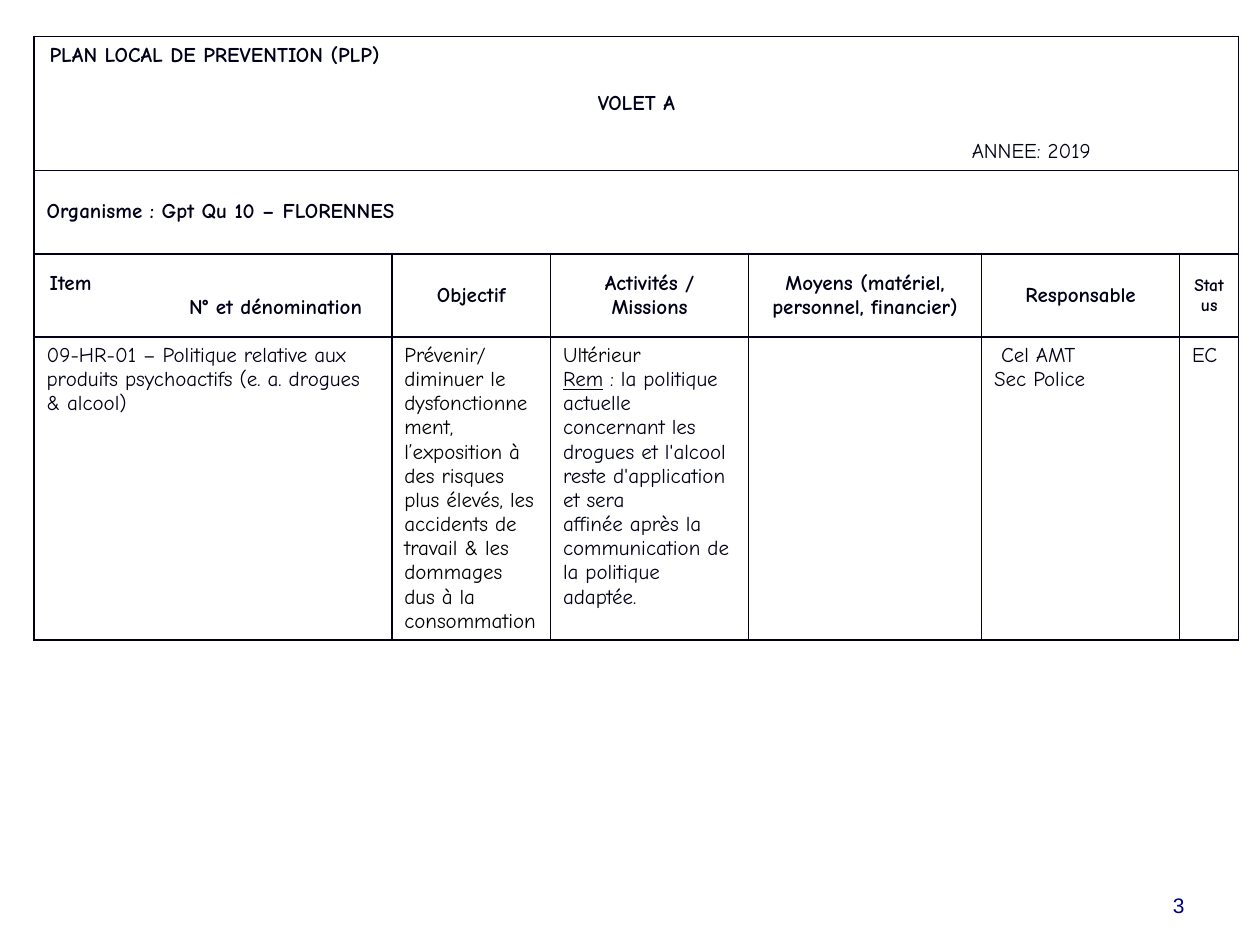
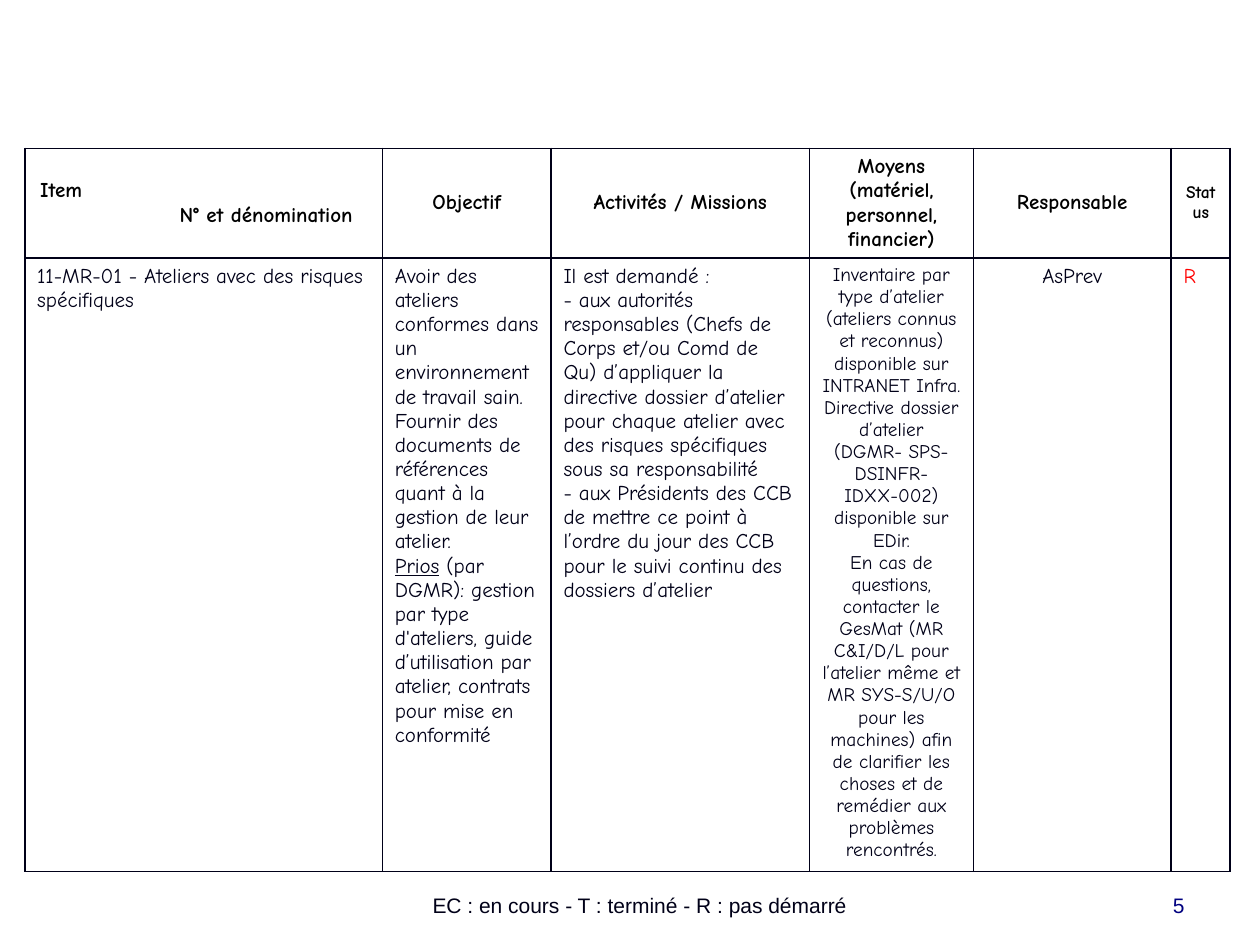
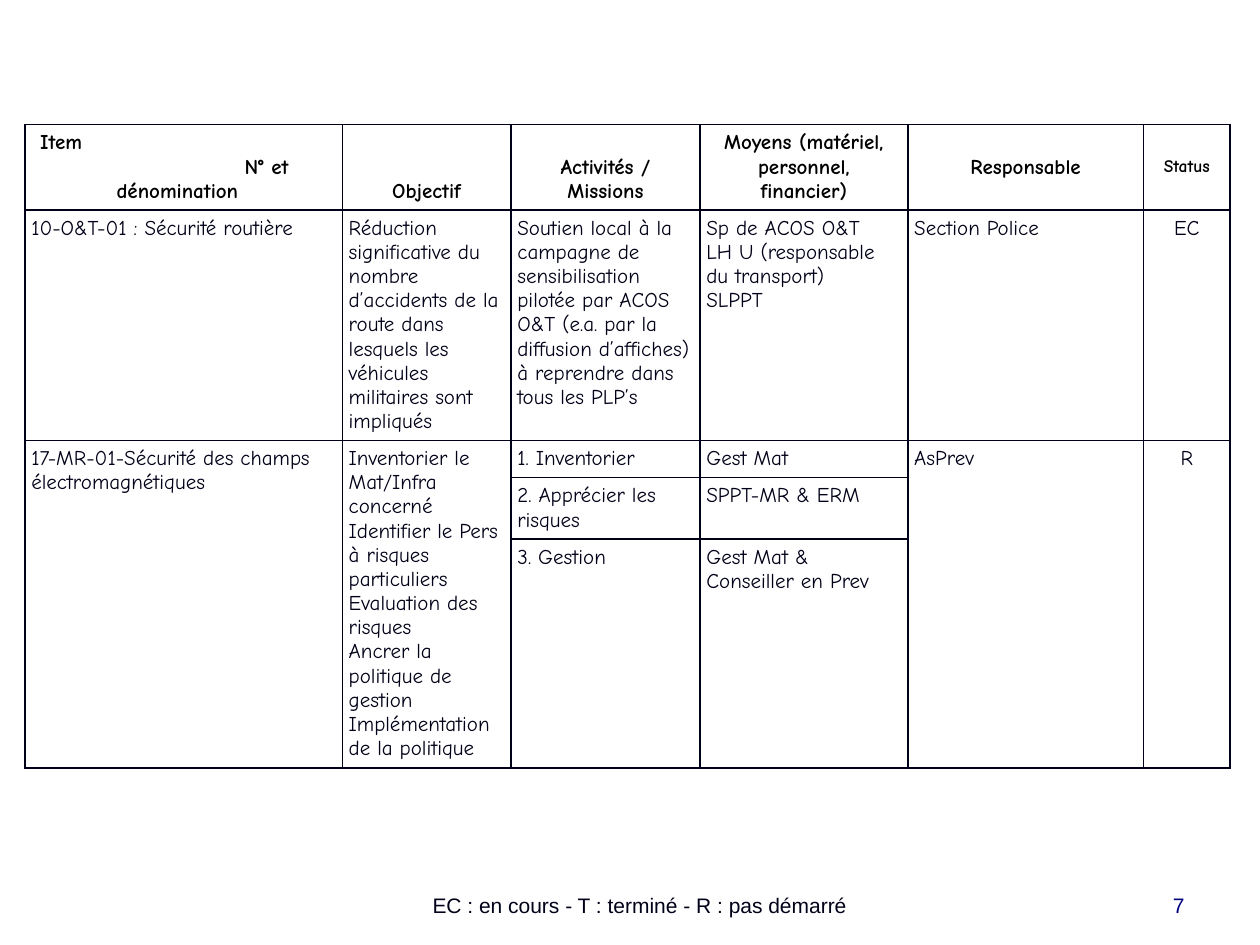
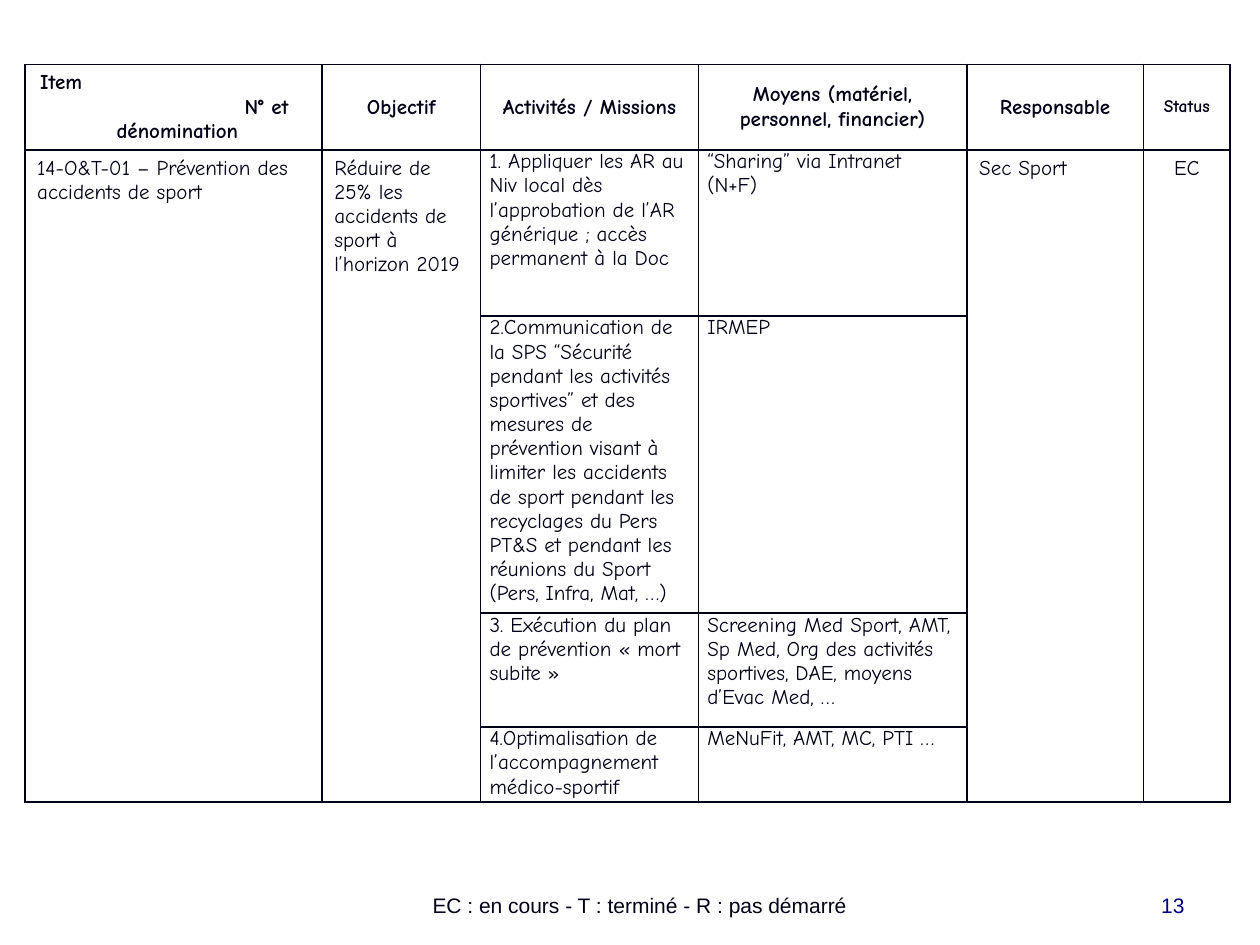
from dataclasses import dataclass
from typing import Any

from pptx import Presentation
from pptx.dml.color import RGBColor
from pptx.enum.text import MSO_ANCHOR as ANCHOR, PP_ALIGN as ALIGN
from pptx.oxml import parse_xml
from pptx.oxml.ns import nsdecls
from pptx.util import Cm, Pt

INK, BLACK, NAVY, RED = "000018", "000000", "000080", "FF0000"
TABLE_FONT, FOOTER_FONT = "Comic Neue", "Arial"
LINE_PITCH = 1.15
LEGEND = "EC : en cours - T : terminé - R : pas démarré"
NORMAL, TIGHT, FLAT = (0.25, 0.13), (0.13, 0.13), (0.18, 0)


@dataclass
class Para:
    """One paragraph, with an optional underlined lead."""
    text: str
    lead: str = ""
    indent: float = 0
    before: float = 0
    align: Any = None
    bold: Any = None
    color: Any = None


@dataclass
class Cell:
    """Content and style of one table cell."""
    paras: list
    align: Any = ALIGN.LEFT
    anchor: Any = ANCHOR.TOP
    color: str = INK
    size: float = 12
    bold: bool = False
    inset: tuple = NORMAL
    rows: int = 1
    cols: int = 1
    vert: str = ""


def rgb(value):
    """Turn a hex string into a colour."""
    return RGBColor.from_string(value)


def add_run(p, text, font, size, color, bold=False, underline=False):
    """Add one formatted run to a paragraph."""
    r = p.add_run()
    r.text = text
    r.font.name, r.font.size = font, Pt(size)
    r.font.bold, r.font.underline = bold, underline
    r.font.color.rgb = rgb(color)


def add_borders(cell):
    """Draw a thin line on each side of a cell."""
    tcPr = cell._tc.get_or_add_tcPr()
    for side in "LRTB":
        tcPr.append(parse_xml(
            f'<a:ln{side} {nsdecls("a")} w="12700"><a:solidFill>'
            f'<a:srgbClr val="{INK}"/></a:solidFill></a:ln{side}>'))
    cell.fill.background()


def write_cell(cell, spec):
    """Write the paragraphs of a cell specification."""
    cell.vertical_anchor = spec.anchor
    cell.margin_left = cell.margin_right = Cm(spec.inset[0])
    cell.margin_top = cell.margin_bottom = Cm(spec.inset[1])
    if spec.vert:
        cell._tc.get_or_add_tcPr().set("vert", spec.vert)
    tf = cell.text_frame
    for i, item in enumerate(spec.paras):
        para = item if isinstance(item, Para) else Para(item)
        p = tf.paragraphs[0] if i == 0 else tf.add_paragraph()
        p.alignment = spec.align if para.align is None else para.align
        p.line_spacing = Pt(spec.size * LINE_PITCH)
        if para.indent:
            p._p.get_or_add_pPr().set("marL", str(Cm(para.indent)))
        if para.before:
            p.space_before = Pt(para.before)
        bold = spec.bold if para.bold is None else para.bold
        color = para.color or spec.color
        if para.lead:
            add_run(p, para.lead, TABLE_FONT, spec.size, color, bold, True)
        add_run(p, para.text, TABLE_FONT, spec.size, color, bold)


def add_plan(s, left, top, widths, heights, rows):
    """Add a bordered plan table; None marks an empty or covered cell."""
    table = s.shapes.add_table(len(heights), len(widths), Cm(left), Cm(top),
                               Cm(sum(widths)), Cm(sum(heights))).table
    table.first_row = table.horz_banding = False
    for col, width in zip(table.columns, widths):
        col.width = Cm(width)
    for row, height in zip(table.rows, heights):
        row.height = Cm(height)
    for i, row in enumerate(rows):
        for j, spec in enumerate(row):
            cell = table.cell(i, j)
            add_borders(cell)
            if spec is None:
                continue
            if spec.rows > 1 or spec.cols > 1:
                cell.merge(table.cell(i + spec.rows - 1, j + spec.cols - 1))
            write_cell(cell, spec)


def header(color, item_lines, middle=ANCHOR.MIDDLE):
    """Return the row of column headings."""
    def heading(text, anchor=ANCHOR.MIDDLE, **style):
        return Cell([text], ALIGN.CENTER, anchor, color, bold=True, **style)

    item = [Para(text, indent=indent) for text, indent in item_lines]
    return [
        Cell(item, anchor=ANCHOR.MIDDLE, color=color, bold=True),
        heading("Objectif", middle),
        heading("Activités / Missions", middle),
        heading("Moyens (matériel, personnel, financier)", middle),
        heading("Responsable"),
        heading("Status", size=10, vert="eaVert"),
    ]


def add_footer_text(s, left, width, text, color, align):
    """Add one text of the footer line."""
    tf = s.shapes.add_textbox(Cm(left), Cm(17.35), Cm(width), Cm(1.27)).text_frame
    tf.word_wrap = True
    tf.vertical_anchor = ANCHOR.BOTTOM
    p = tf.paragraphs[0]
    p.alignment = align
    add_run(p, text, FOOTER_FONT, 12, color)


def add_page(prs, number, legend=True):
    """Add a blank slide with its footer."""
    s = prs.slides.add_slide(prs.slide_layouts[6])
    if legend:
        add_footer_text(s, 5.9, 14, LEGEND, INK, ALIGN.CENTER)
    add_footer_text(s, 18.21, 5.92, number, NAVY, ALIGN.RIGHT)
    return s


ITEM_TWO_LINES = [("Item", 0.06), ("N° et dénomination", 2.87)]
ITEM_THREE_LINES = [("Item", 0.06), ("N° et", 4.18), ("dénomination", 1.6)]


def slide_drugs(prs):
    """Build the plan heading and the psychoactive products item."""
    s = add_page(prs, "3", legend=False)
    title = Cell([
        Para("PLAN LOCAL DE PREVENTION (PLP)", indent=0.06),
        Para("VOLET A", before=13.8, align=ALIGN.CENTER),
        Para("ANNEE: 2019", before=13.8, indent=18.65, bold=False),
    ], anchor=ANCHOR.MIDDLE, bold=True, cols=6)
    unit = Cell(["Organisme : Gpt Qu 10 – FLORENNES"], anchor=ANCHOR.MIDDLE,
                bold=True, cols=6)
    body = [
        Cell(["09-HR-01 – Politique relative aux produits psychoactifs "
              "(e. a. drogues & alcool)"]),
        Cell(["Prévenir/diminuer le dysfonctionnement, l’exposition à des "
              "risques plus élevés, les accidents de travail & les dommages "
              "dus à la consommation"], color=BLACK),
        Cell([Para("Ultérieur", color=BLACK),
              Para(" : la politique actuelle concernant les drogues et "
                   "l'alcool reste d'application et sera", lead="Rem"),
              "affinée après la communication de la politique adaptée."]),
        None,
        Cell([Para("Cel AMT", indent=0.14), "Sec Police"]),
        Cell(["EC"]),
    ]
    add_plan(s, 0.69, 0.74, [7.21, 3.2, 3.99, 4.7, 3.99, 1.19],
             [2.69, 1.68, 1.68, 6.1],
             [[title] + [None] * 5, [unit] + [None] * 5,
              header(INK, ITEM_TWO_LINES), body])


def slide_workshops(prs):
    """Build the item on workshops with specific risks."""
    s = add_page(prs, "5")
    body = [
        Cell(["11-MR-01 - Ateliers avec des risques spécifiques"]),
        Cell(["Avoir des ateliers conformes dans un environnement de travail "
              "sain. Fournir des documents de références quant à la gestion "
              "de leur atelier.",
              Para(" (par DGMR): gestion par type d'ateliers, guide "
                   "d’utilisation par atelier, contrats pour mise en "
                   "conformité", lead="Prios")]),
        Cell(["Il est demandé :",
              "- aux autorités responsables (Chefs de Corps et/ou Comd de Qu) "
              "d’appliquer la directive dossier d’atelier pour chaque atelier "
              "avec des risques spécifiques sous sa responsabilité",
              "- aux Présidents des CCB de mettre ce point à l’ordre du jour "
              "des CCB pour le suivi continu des dossiers d’atelier"]),
        Cell(["Inventaire par type d’atelier (ateliers connus et reconnus) "
              "disponible sur INTRANET Infra. Directive dossier d’atelier "
              "(DGMR- SPS-DSINFR-IDXX-002) disponible sur EDir.",
              "En cas de questions, contacter le GesMat (MR C&I/D/L pour "
              "l’atelier même et MR SYS-S/U/O pour les machines) afin de "
              "clarifier les choses et de remédier aux problèmes rencontrés."],
             ALIGN.CENTER, size=11),
        Cell(["AsPrev"], ALIGN.CENTER),
        Cell(["R"], color=RED),
    ]
    add_plan(s, 0.5, 2.99, [7.21, 3.4, 5.21, 3.3, 3.99, 1.19], [2.2, 12.37],
             [header(BLACK, ITEM_TWO_LINES), body])


def slide_road_and_fields(prs):
    """Build the items on road safety and electromagnetic fields."""
    def tight(*paras, **style):
        return Cell(list(paras), inset=TIGHT, **style)

    s = add_page(prs, "7")
    road = [
        tight("10-O&T-01 : Sécurité routière"),
        tight("Réduction significative du nombre d’accidents de la route dans "
              "lesquels les véhicules militaires sont impliqués"),
        tight("Soutien local à la campagne de sensibilisation pilotée par "
              "ACOS O&T (e.a. par la diffusion d’affiches) à reprendre dans "
              "tous les PLP’s"),
        tight("Sp de ACOS O&T", "LH U (responsable du transport)", "SLPPT"),
        tight("Section Police"),
        tight("EC", align=ALIGN.CENTER),
    ]
    fields = [
        tight("17-MR-01-Sécurité des champs électromagnétiques", rows=3),
        tight("Inventorier le Mat/Infra concerné",
              "Identifier le Pers à risques particuliers",
              "Evaluation des risques", "Ancrer la politique de gestion",
              "Implémentation de la politique", rows=3),
        tight("1. Inventorier"),
        tight("Gest Mat"),
        tight("AsPrev", rows=3),
        tight("R", align=ALIGN.CENTER, rows=3),
    ]
    steps = [("2. Apprécier les risques", "SPPT-MR & ERM"),
             ("3. Gestion", "Gest Mat & Conseiller en Prev")]
    add_plan(s, 0.5, 2.51, [6.4, 3.4, 3.81, 4.19, 4.75, 1.75],
             [1.71, 4.64, 0.75, 1.23, 4.62],
             [header(BLACK, ITEM_THREE_LINES, ANCHOR.BOTTOM), road, fields]
             + [[None, None, tight(task), tight(means), None, None]
                for task, means in steps])


def slide_sport(prs):
    """Build the item on sport accidents."""
    s = add_page(prs, "13")
    steps = [
        ("1. Appliquer les AR au Niv local dès l’approbation de l’AR "
         "générique ; accès permanent à la Doc",
         "“Sharing” via Intranet (N+F)"),
        ("2.Communication de la SPS “Sécurité pendant les activités "
         "sportives” et des mesures de prévention visant à limiter les "
         "accidents de sport pendant les recyclages du Pers PT&S et pendant "
         "les réunions du Sport (Pers, Infra, Mat, …)", "IRMEP"),
        ("3. Exécution du plan de prévention « mort subite »",
         "Screening Med Sport, AMT, Sp Med, Org des activités sportives, "
         "DAE, moyens d’Evac Med, …"),
        ("4.Optimalisation de l’accompagnement médico-sportif",
         "MeNuFit, AMT, MC, PTI …"),
    ]
    body = [[None, None, Cell([task], inset=FLAT), Cell([means], inset=FLAT),
             None, None] for task, means in steps]
    body[0][:2] = [
        Cell(["14-O&T-01 – Prévention des accidents de sport"], rows=4),
        Cell(["Réduire de 25% les accidents de sport à l’horizon 2019"], rows=4),
    ]
    body[0][4:] = [Cell(["Sec Sport"], rows=4),
                   Cell(["EC"], ALIGN.CENTER, rows=4)]
    add_plan(s, 0.5, 1.3, [5.99, 3.2, 4.39, 5.41, 3.56, 1.75],
             [1.71, 3.35, 5.99, 2.29, 1.52],
             [header(INK, ITEM_THREE_LINES)] + body)


def main():
    """Build and save the presentation."""
    prs = Presentation()
    prs.slide_width, prs.slide_height = Cm(25.4), Cm(19.05)
    slide_drugs(prs)
    slide_workshops(prs)
    slide_road_and_fields(prs)
    slide_sport(prs)
    prs.save("out.pptx")


if __name__ == "__main__":
    main()
